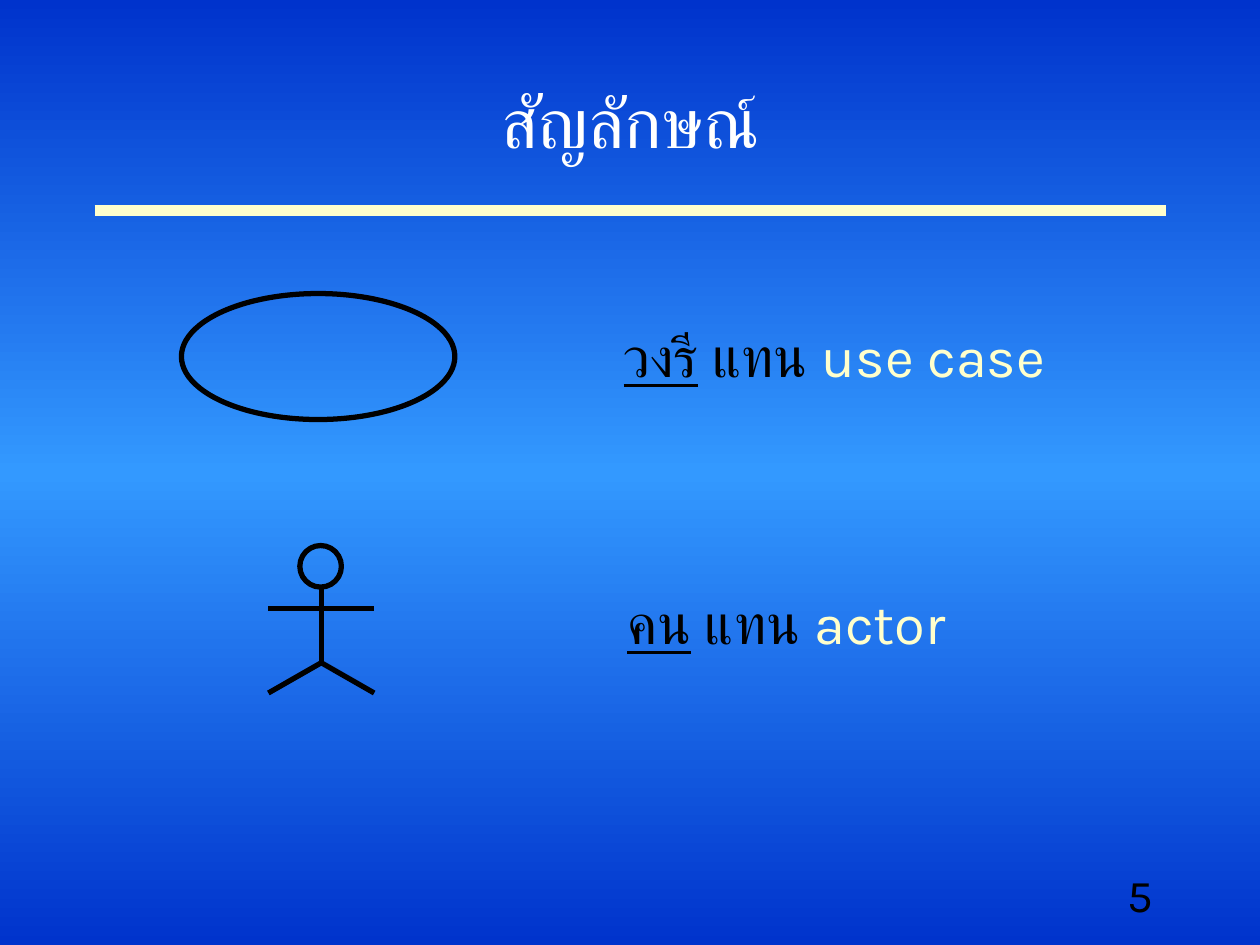
from copy import deepcopy

from lxml import etree
from pptx import Presentation
from pptx.dml.color import RGBColor
from pptx.enum.shapes import MSO_CONNECTOR, MSO_SHAPE
from pptx.enum.text import MSO_ANCHOR, MSO_AUTO_SIZE, PP_ALIGN
from pptx.oxml.ns import qn
from pptx.util import Inches, Pt

COLORS = {
    "edge": "0033CC",
    "middle": "3399FF",
    "accent": "FFFFCC",
    "ink": "000000",
    "title": "FFFFFF",
}
FONT = "Karla"


def add_run(paragraph, text, size, color, underline=False):
    run = paragraph.add_run()
    run.text = text
    run.font.name = FONT
    run.font.size = Pt(size)
    run.font.underline = underline
    run.font.color.rgb = RGBColor.from_string(COLORS[color])


def add_line(shapes, start, end, color, width):
    line = shapes.add_connector(
        MSO_CONNECTOR.STRAIGHT, *[Inches(value) for value in (*start, *end)]
    )
    line.line.color.rgb = RGBColor.from_string(COLORS[color])
    line.line.width = Pt(width)
    properties = line._element.find(qn("p:spPr"))
    etree.SubElement(properties, qn("a:effectLst"))


presentation = Presentation()
presentation.slide_width = Inches(10)
presentation.slide_height = Inches(7.5)
slide = presentation.slides.add_slide(presentation.slide_layouts[5])

# Background: dark at both edges, light in the middle
fill = slide.background.fill
fill.gradient()
fill.gradient_angle = 270
stop_list = slide.element.find(".//" + qn("a:gsLst"))
stop_list.append(deepcopy(stop_list[-1]))
for stop, position, color in zip(
    fill.gradient_stops, (0, 0.5, 1), ("edge", "middle", "edge")
):
    stop.position = position
    stop.color.rgb = RGBColor.from_string(COLORS[color])

# Title, rule and slide number
add_line(slide.shapes, (0.75, 1.67), (9.25, 1.67), "accent", 6)

title = slide.shapes.title
title.left, title.top = Inches(0.42), Inches(0.33)
title.width, title.height = Inches(9.17), Inches(1.25)
title.text_frame.vertical_anchor = MSO_ANCHOR.MIDDLE
paragraph = title.text_frame.paragraphs[0]
paragraph.alignment = PP_ALIGN.CENTER
add_run(paragraph, "สัญลักษณ์", 40, "title")

number = slide.shapes.add_textbox(Inches(7.17), Inches(6.83), Inches(2.08), Inches(0.5))
number.text_frame.word_wrap = True
paragraph = number.text_frame.paragraphs[0]
paragraph.alignment = PP_ALIGN.RIGHT
add_run(paragraph, "5", 26, "ink")

# Each symbol: ellipse box, strokes, label box, Thai name, meaning
neck, hip = (2.55, 4.67), (2.55, 5.26)
left_foot, right_foot = (2.13, 5.5), (2.97, 5.5)
actor_strokes = [
    (neck, hip),
    ((2.13, 4.83), (2.97, 4.83)),
    (hip, left_foot),
    (hip, right_foot),
]
symbols = [
    ((1.44, 2.33, 2.17, 1), [], (4.85, 2.5, 3.65, 0.63), "วงรี", "use case"),
    ((2.38, 4.33, 0.33, 0.33), actor_strokes, (4.88, 4.62, 2.87, 0.63), "คน", "actor"),
]
for ellipse_box, strokes, label_box, name, meaning in symbols:
    group = slide.shapes.add_group_shape()
    ellipse = group.shapes.add_shape(
        MSO_SHAPE.OVAL, *[Inches(value) for value in ellipse_box]
    )
    ellipse.shadow.inherit = False
    ellipse.fill.background()
    ellipse.line.color.rgb = RGBColor.from_string(COLORS["ink"])
    ellipse.line.width = Pt(3)

    for start, end in strokes:
        add_line(group.shapes, start, end, "ink", 3)

    label = group.shapes.add_textbox(*[Inches(value) for value in label_box])
    label.text_frame.word_wrap = False
    label.text_frame.auto_size = MSO_AUTO_SIZE.SHAPE_TO_FIT_TEXT
    paragraph = label.text_frame.paragraphs[0]
    add_run(paragraph, name, 32, "ink", underline=True)
    add_run(paragraph, " แทน ", 32, "ink")
    add_run(paragraph, meaning, 32, "accent")

presentation.save("out.pptx")
